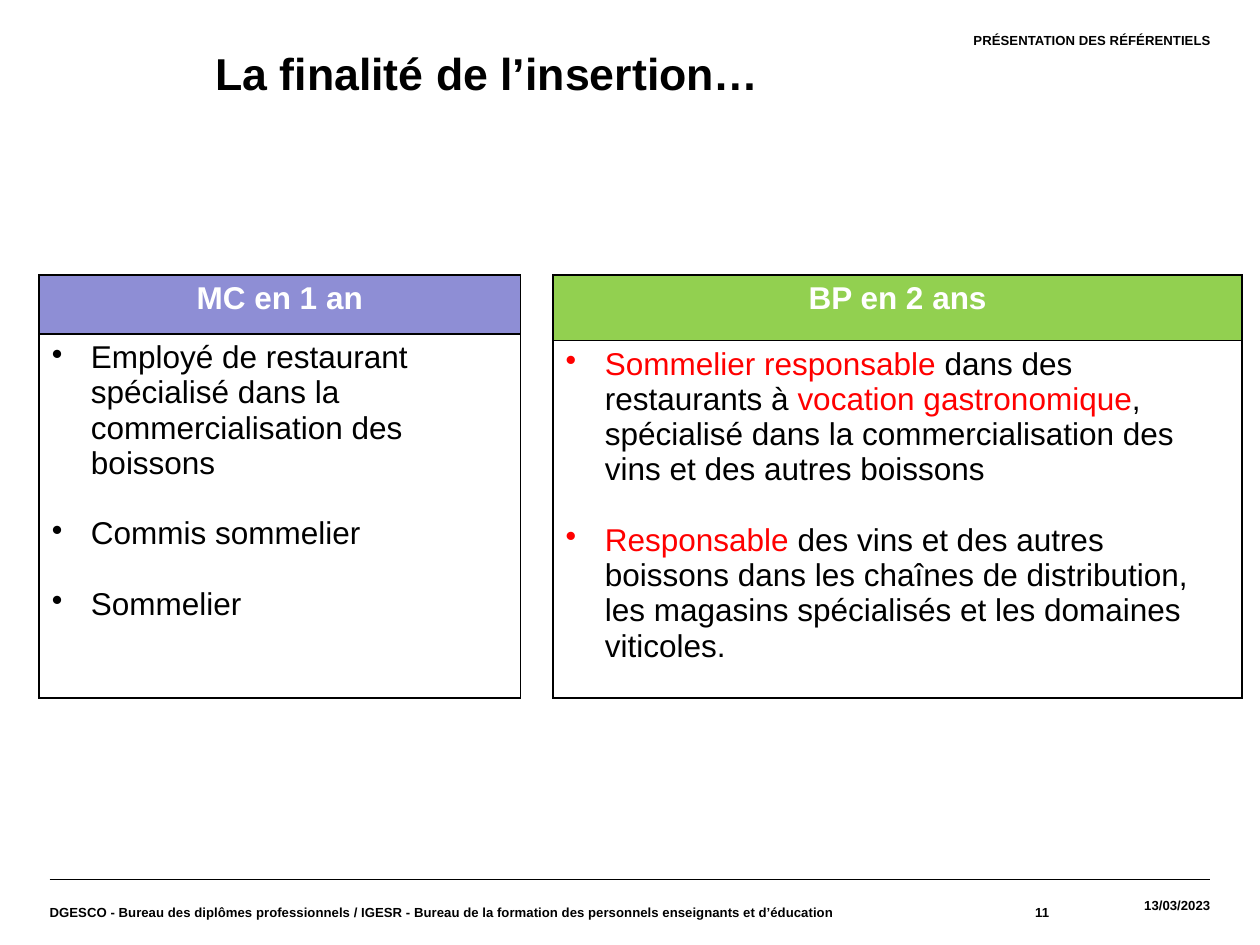
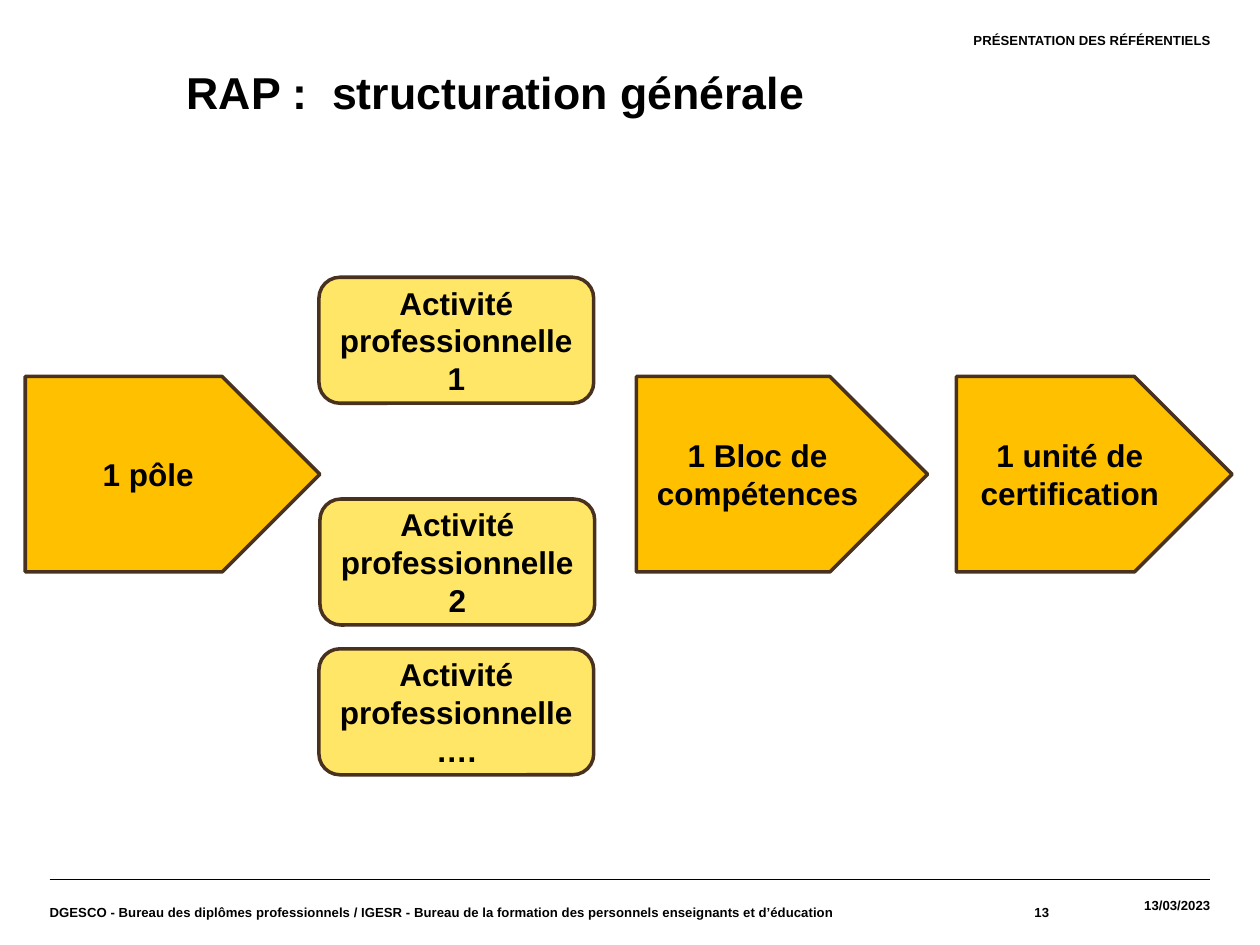
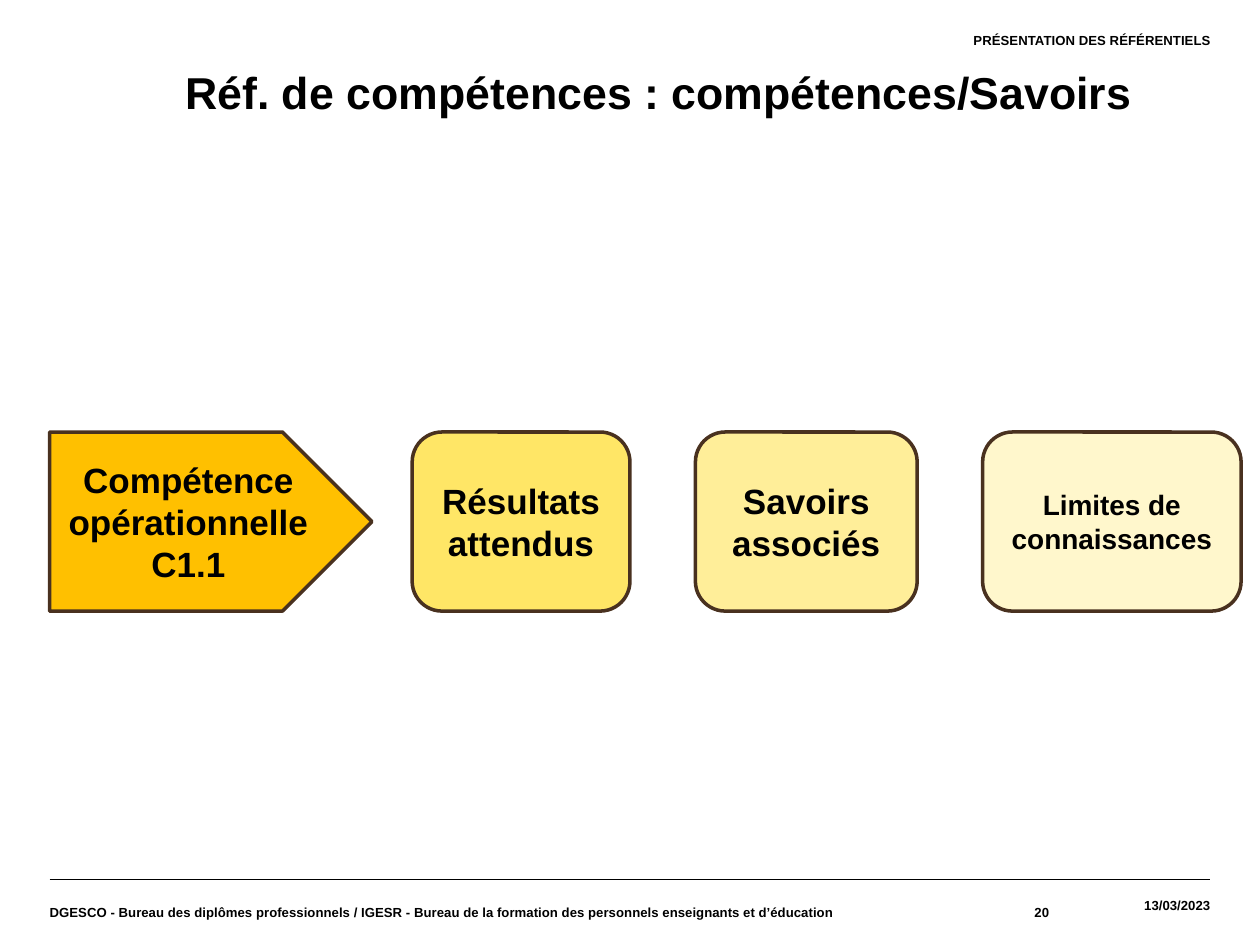
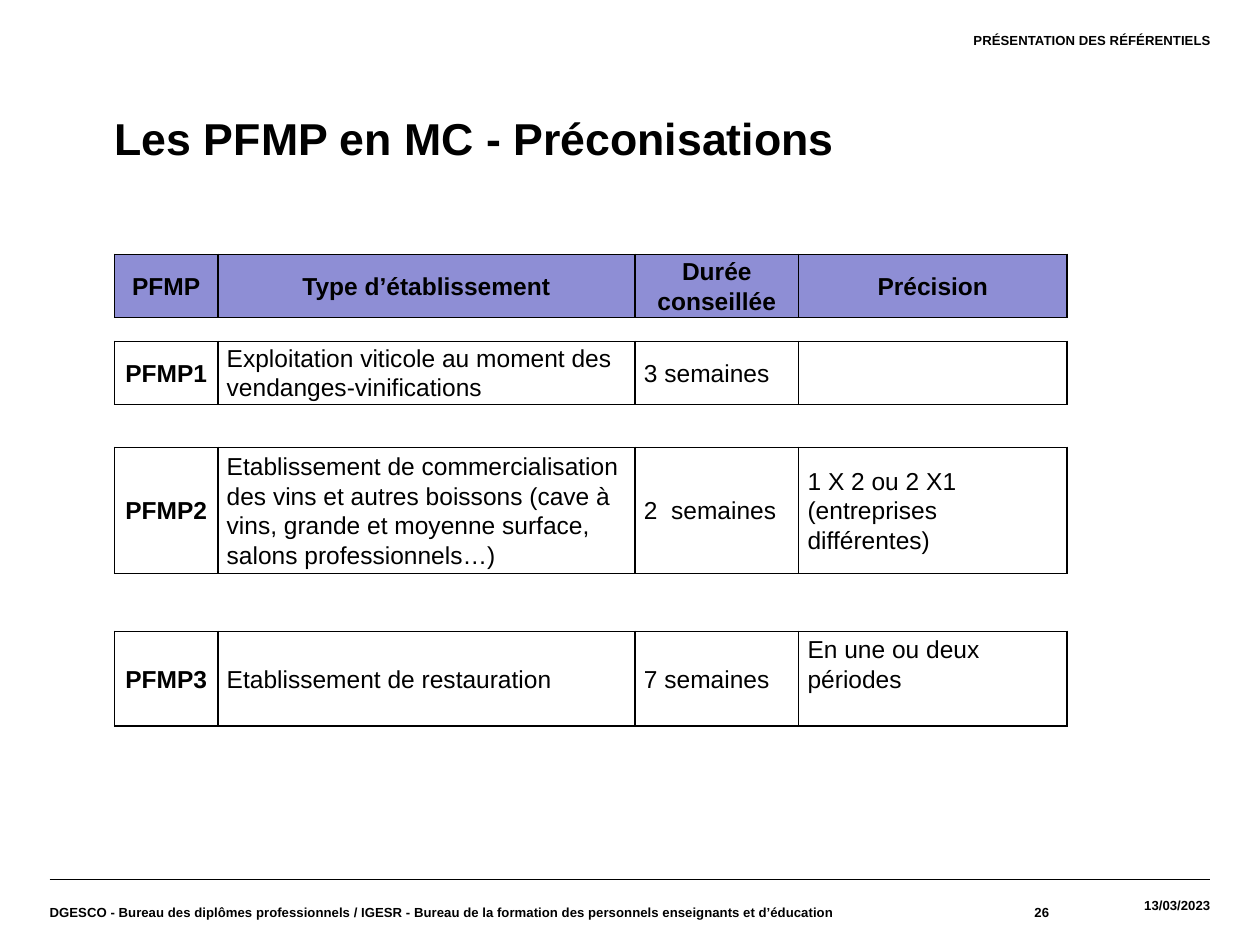
"""Builds four slides on the sommelier diplomas: aims, structure, skills and placements."""
from lxml import etree
from pptx import Presentation
from pptx.dml.color import RGBColor
from pptx.enum import shapes, text
from pptx.oxml.ns import qn
from pptx.util import Cm, Pt


class Look:
    font = "Arial"
    black, white, red = "000000", "FFFFFF", "FF0000"
    violet, green, brown = "8E8ED5", "92D050", "49311F"
    gold, yellow, pale, cream = "FFC000", "FFE666", "FFEE99", "FFF7CC"
    title, body, skill, limit, cell, small = 25.5, 18, 20, 16, 14, 7.5


LEFT, MID, RIGHT = text.PP_ALIGN.LEFT, text.PP_ALIGN.CENTER, text.PP_ALIGN.RIGHT
TOP, CORE = text.MSO_ANCHOR.TOP, text.MSO_ANCHOR.MIDDLE
PLATE, ROUND = shapes.MSO_SHAPE.PENTAGON, shapes.MSO_SHAPE.ROUNDED_RECTANGLE


def put(frame, paras, size, align=LEFT, bold=True, color=Look.black, bullet=False, lead=None):
    """Write paragraphs, each one a string or a list of (words, colour) runs."""
    frame.word_wrap = True
    for i, runs in enumerate(paras):
        para = frame.add_paragraph() if i else frame.paragraphs[0]
        para.alignment = align
        if bullet:
            props = para._p.get_or_add_pPr()
            props.set("marL", str(Cm(0.79)))
            props.set("indent", str(Cm(-0.79)))
            etree.SubElement(props, qn("a:buChar"), char="•")
            if i:
                para.space_before = Pt(20)
        if lead:
            para.line_spacing = lead
        for words, tint in [(runs, color)] if isinstance(runs, str) else runs:
            run = para.add_run()
            run.text = words
            run.font.name, run.font.size, run.font.bold = Look.font, Pt(size), bold
            run.font.color.rgb = RGBColor.from_string(tint)


def grid(page, left, top, cols, rows, head):
    """Add a bordered table whose first row is filled with head, and return it."""
    table = page.shapes.add_table(len(rows), len(cols), Cm(left), Cm(top),
                                  Cm(sum(cols)), Cm(sum(rows))).table
    table.first_row = table.horz_banding = False
    for col, wide in zip(table.columns, cols):
        col.width = Cm(wide)
    for r, high in enumerate(rows):
        table.rows[r].height = Cm(high)
        for cell in table.rows[r].cells:
            props = cell._tc.get_or_add_tcPr()
            for side in ("lnL", "lnR", "lnT", "lnB"):
                edge = etree.SubElement(props, qn(f"a:{side}"), w=str(Pt(1)))
                paint = etree.SubElement(edge, qn("a:solidFill"))
                etree.SubElement(paint, qn("a:srgbClr"), val=Look.black)
            cell.fill.solid()
            cell.fill.fore_color.rgb = RGBColor.from_string(Look.white if r else head)
    return table


deck = Presentation()
deck.slide_width, deck.slide_height = Cm(25.4), Cm(19.05)

office = ("DGESCO - Bureau des diplômes professionnels / IGESR - "
          "Bureau de la formation des personnels enseignants et d’éducation")
heads = [
    ("La finalité de l’insertion…", 4.34, 0.89, "11"),
    ("RAP :  structuration générale", 3.76, 1.27, "13"),
    ("Réf. de compétences : compétences/Savoirs", 3.73, 1.27, "20"),
    ("Les PFMP en MC - Préconisations", 2.31, 2.21, "26"),
]
pages = []
for name, left, top, number in heads:
    page = deck.slides.add_slide(deck.slide_layouts[5])
    pages.append(page)
    title = page.shapes.title
    title.left, title.top, title.width, title.height = Cm(left), Cm(top), Cm(21.08), Cm(1.12)
    frame = title.text_frame
    frame.margin_left = frame.margin_right = frame.margin_bottom = 0
    frame.margin_top = Cm(0.03)
    frame.vertical_anchor = TOP
    frame.auto_size = text.MSO_AUTO_SIZE.SHAPE_TO_FIT_TEXT
    put(frame, [name], Look.title)

    rule = page.shapes.add_connector(shapes.MSO_CONNECTOR.STRAIGHT,
                                     Cm(1), Cm(17.73), Cm(24.4), Cm(17.73))
    rule.line.color.rgb = RGBColor.from_string(Look.black)
    rule.line.width = Pt(0.8)
    etree.SubElement(rule._element.spPr, qn("a:effectLst"))

    for words, x, y, wide, align, anchor, foot in [
        ("PRÉSENTATION DES RÉFÉRENTIELS", 9.2, 0.66, 15.2, RIGHT, TOP, 0),
        ("13/03/2023", 21.15, 17.73, 3.25, RIGHT, CORE, 0.3),
        (number, 17.4, 17.73, 3.75, RIGHT, CORE, 0),
        (office, 1, 17.73, 16.4, LEFT, CORE, 0),
    ]:
        frame = page.shapes.add_textbox(Cm(x), Cm(y), Cm(wide), Cm(1.32)).text_frame
        frame.margin_left = frame.margin_right = frame.margin_top = 0
        frame.margin_bottom = Cm(foot)
        frame.vertical_anchor = anchor
        put(frame, [words], Look.small, align)

aims, plan, skills, stages = pages

jobs = ["Employé de restaurant spécialisé dans la commercialisation des boissons",
        "Commis sommelier", "Sommelier"]
posts = [
    [("Sommelier responsable ", Look.red), ("dans des restaurants à ", Look.black),
     ("vocation gastronomique", Look.red),
     (", spécialisé dans la commercialisation des vins et des autres boissons", Look.black)],
    [("Responsable", Look.red),
     (" des vins et des autres boissons dans les chaînes de distribution, "
      "les magasins spécialisés et les domaines viticoles.", Look.black)],
]
for name, tint, left, wide, rows, items in [
    ("MC en 1 an", Look.violet, 0.79, 9.7, (1.19, 7.34), jobs),
    ("BP en 2 ans", Look.green, 11.15, 13.89, (1.32, 7.21), posts),
]:
    table = grid(aims, left, 5.54, [wide], rows, tint)
    put(table.cell(0, 0).text_frame, [name], Look.body, MID, color=Look.white)
    put(table.cell(1, 0).text_frame, items, Look.body, bold=False, bullet=True)

task = "Activité professionnelle"
for page, kind, x, y, wide, high, tint, size, words in [
    (plan, PLATE, 0.51, 7.59, 5.94, 3.94, Look.gold, Look.body, ["1 pôle"]),
    (plan, ROUND, 6.43, 5.59, 5.54, 2.54, Look.yellow, Look.body, [f"{task} 1"]),
    (plan, PLATE, 12.83, 7.59, 5.87, 3.94, Look.gold, Look.body, ["1 Bloc de compétences"]),
    (plan, PLATE, 19.28, 7.59, 5.56, 3.94, Look.gold, Look.body, ["1 unité de certification"]),
    (plan, ROUND, 6.45, 10.06, 5.54, 2.54, Look.yellow, Look.body, [f"{task} 2"]),
    (plan, ROUND, 6.43, 13.08, 5.54, 2.54, Look.yellow, Look.body, [task, "…."]),
    (skills, PLATE, 1, 8.71, 6.5, 3.61, Look.gold, Look.skill, ["Compétence opérationnelle C1.1"]),
    (skills, ROUND, 8.31, 8.71, 4.39, 3.61, Look.yellow, Look.skill, ["Résultats attendus"]),
    (skills, ROUND, 14.02, 8.71, 4.47, 3.61, Look.pale, Look.skill, ["Savoirs associés"]),
    (skills, ROUND, 19.81, 8.71, 5.21, 3.61, Look.cream, Look.limit, ["Limites de connaissances"]),
]:
    shape = page.shapes.add_shape(kind, Cm(x), Cm(y), Cm(wide), Cm(high))
    shape.shadow.inherit = False
    shape.fill.solid()
    shape.fill.fore_color.rgb = RGBColor.from_string(tint)
    shape.line.color.rgb = RGBColor.from_string(Look.brown)
    shape.line.width = Pt(2)
    shape.text_frame.vertical_anchor = CORE
    put(shape.text_frame, words, size, MID)

for top, high, tint, words in [
    (5.13, 1.27, Look.violet, ["PFMP", "Type d’établissement", "Durée conseillée", "Précision"]),
    (6.88, 1.27, Look.white,
     ["PFMP1", "Exploitation viticole au moment des vendanges-vinifications", "3 semaines", ""]),
    (9.02, 2.54, Look.white,
     ["PFMP2", "Etablissement de commercialisation des vins et autres boissons "
      "(cave à vins, grande et moyenne surface, salons professionnels…)",
      "2  semaines", "1 X 2 ou 2 X1 (entreprises différentes)"]),
    (12.73, 1.91, Look.white,
     ["PFMP3", "Etablissement de restauration", "7 semaines", "En une ou deux périodes"]),
]:
    table = grid(stages, 2.31, top, [2.08, 8.41, 3.3, 5.41], [high], tint)
    for i, cell in enumerate(table.rows[0].cells):
        cell.margin_left = cell.margin_right = Cm(0.18)
        cell.margin_top = cell.margin_bottom = 0
        cell.vertical_anchor = CORE
        strong = i == 0 or tint == Look.violet
        if words[i]:
            put(cell.text_frame, [words[i]], Look.cell, MID if strong else LEFT, strong, lead=1.07)
cell.margin_bottom = Cm(0.6)

deck.save("out.pptx")
